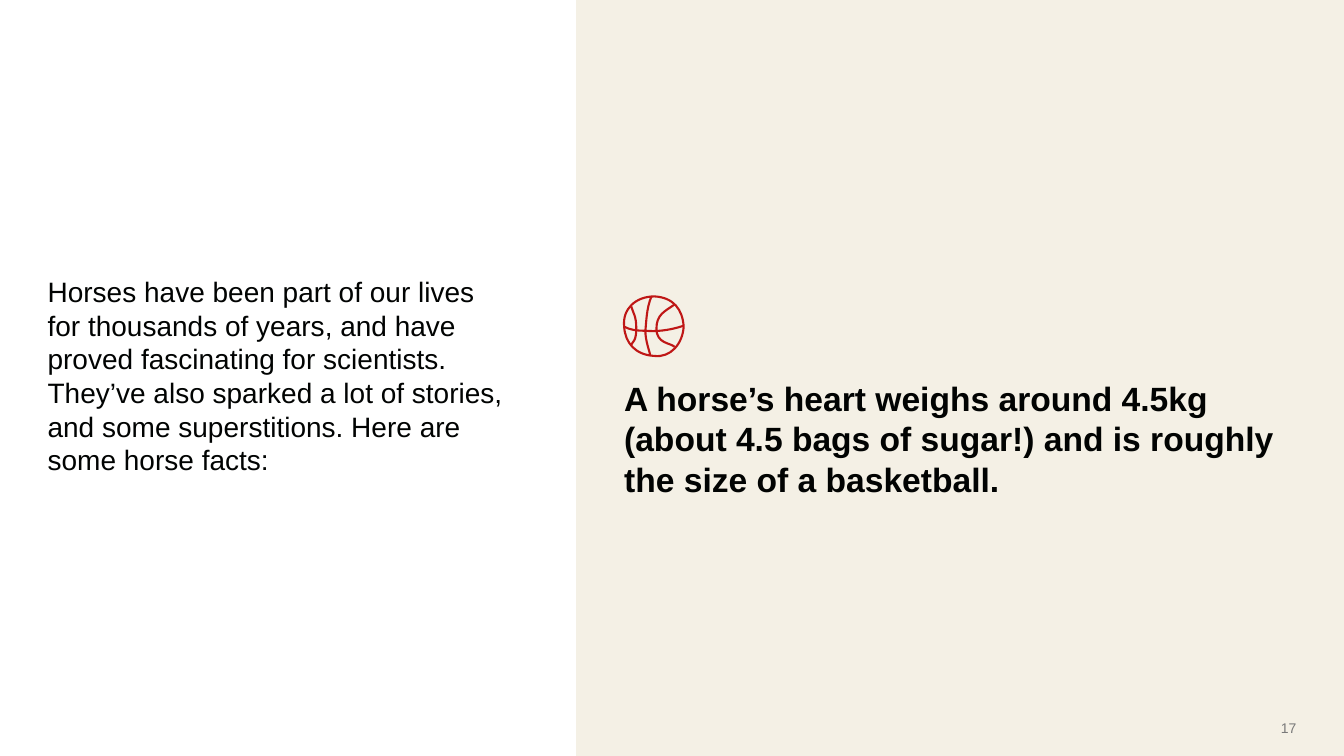
import lxml.etree
import pptx
import pptx.dml.color
import pptx.enum.shapes
import pptx.enum.text
import pptx.oxml.ns
import pptx.util

Cm, Pt = pptx.util.Cm, pptx.util.Pt
ALIGN, ANCHOR = pptx.enum.text.PP_ALIGN, pptx.enum.text.MSO_ANCHOR
qn = pptx.oxml.ns.qn

COLORS = {"panel": "F4F0E5", "text": "010302", "ball": "BF1716", "number": "797979"}
FONT = "Arial"
LEADING = 1.2
PAGE_SIZE = (33.87, 19.05)
PANEL_LEFT = 14.52

TEXTS = [
    {"lines": ["Horses have been part of our lives ",
               "for thousands of years, and have proved fascinating for scientists. "
               "They’ve also sparked a lot of stories, and some superstitions. "
               "Here are some horse facts:"],
     "at": (1.2, 6.92, 12.12, 4.27), "size": 20},
    {"lines": ["A horse’s heart weighs around 4.5kg (about 4.5 bags of sugar!) "
               "and is roughly the size of a basketball."],
     "at": (15.73, 9.52, 16.94, 3.07), "size": 24, "bold": True},
    {"lines": ["17"], "at": (30.51, 18.14, 2.16, 0.43), "size": 10, "color": "number",
     "align": ALIGN.RIGHT, "anchor": ANCHOR.MIDDLE},
]

BALL_ORIGIN = (15.73, 7.47)
BALL_SIZE = 1.5
BALL_UNITS = 59
BALL_CURVES = [
    [(0, 30), (-2, 12), (12, 0), (30, 0), (49, 1), (58, 13), (59, 30),
     (58, 47), (46, 61), (30, 59), (11, 58), (1, 46), (0, 30)],
    [(27, 0), (22, 12), (22, 25), (21, 34), (21, 44), (25, 54), (26, 59)],
    [(0, 30), (6, 33), (11, 34), (21, 34), (31, 35), (44, 34), (59, 29)],
    [(50, 8), (40, 15), (32, 18), (32, 32), (32, 47), (46, 46), (50, 50)],
    [(7, 10), (9, 17), (12, 19), (12, 32), (12, 45), (8, 45), (7, 48)],
]


def color(name):
    return pptx.dml.color.RGBColor.from_string(COLORS[name])


def add_text(page, item):
    box = page.shapes.add_textbox(*map(Cm, item["at"]))
    frame = box.text_frame
    frame.margin_left = frame.margin_top = frame.margin_right = frame.margin_bottom = 0
    frame.word_wrap = True
    frame.auto_size = pptx.enum.text.MSO_AUTO_SIZE.SHAPE_TO_FIT_TEXT
    frame.vertical_anchor = item.get("anchor", ANCHOR.TOP)
    para = frame.paragraphs[0]
    para.alignment = item.get("align", ALIGN.LEFT)
    para.line_spacing = Pt(item["size"] * LEADING)
    for index, line in enumerate(item["lines"]):
        if index:
            para.add_line_break()
        span = para.add_run()
        span.text = line
        span.font.name = FONT
        span.font.size = Pt(item["size"])
        span.font.bold = item.get("bold", False)
        span.font.color.rgb = color(item.get("color", "text"))


def add_curve(group, curve):
    anchors = curve[::3]
    left, top = map(min, zip(*anchors))
    builder = group.shapes.build_freeform(*anchors[0], scale=Cm(BALL_SIZE) / BALL_UNITS)
    builder.add_line_segments(anchors[1:], close=curve[0] == curve[-1])
    stroke = builder.convert_to_shape(*map(Cm, BALL_ORIGIN))
    segments = list(stroke.element.iter(qn("a:lnTo")))
    for index, segment in enumerate(segments):
        bend = lxml.etree.Element(qn("a:cubicBezTo"))
        for x, y in curve[3 * index + 1:3 * index + 4]:
            lxml.etree.SubElement(bend, qn("a:pt"), x=str(x - left), y=str(y - top))
        segment.getparent().replace(segment, bend)
    stroke.shadow.inherit = False
    stroke.fill.background()
    stroke.line.color.rgb = color("ball")
    stroke.line.width = Pt(1.5)


def main():
    """Build the slide with horse facts and a basketball icon."""
    deck = pptx.Presentation()
    deck.slide_width, deck.slide_height = map(Cm, PAGE_SIZE)
    page = deck.slides.add_slide(deck.slide_layouts[6])
    panel = page.shapes.add_shape(
        pptx.enum.shapes.MSO_SHAPE.RECTANGLE,
        Cm(PANEL_LEFT), 0, Cm(PAGE_SIZE[0] - PANEL_LEFT), Cm(PAGE_SIZE[1]))
    panel.shadow.inherit = False
    panel.fill.solid()
    panel.fill.fore_color.rgb = color("panel")
    panel.line.fill.background()
    for item in TEXTS:
        add_text(page, item)
    ball = page.shapes.add_group_shape()
    for curve in BALL_CURVES:
        add_curve(ball, curve)
    deck.save("out.pptx")


if __name__ == "__main__":
    main()
